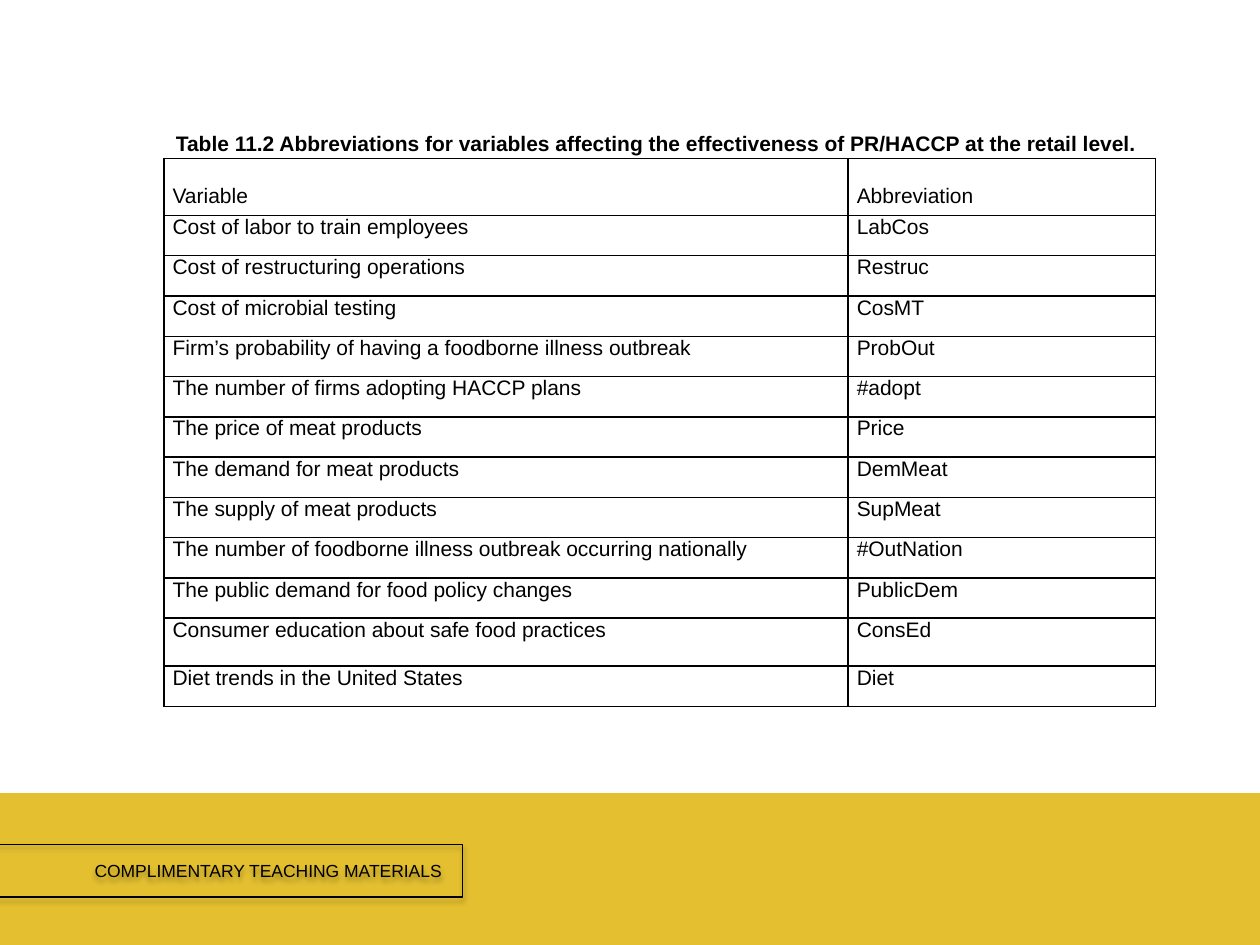
from dataclasses import dataclass

from lxml import etree
from pptx import Presentation
from pptx.dml.color import RGBColor
from pptx.enum.shapes import MSO_SHAPE
from pptx.enum.text import MSO_ANCHOR, PP_ALIGN
from pptx.oxml.ns import qn
from pptx.util import Inches, Pt

RECT = MSO_SHAPE.RECTANGLE
TOP, MIDDLE, BOTTOM = MSO_ANCHOR.TOP, MSO_ANCHOR.MIDDLE, MSO_ANCHOR.BOTTOM
LEFT, CENTER = PP_ALIGN.LEFT, PP_ALIGN.CENTER


@dataclass(frozen=True)
class Theme:
    ink: RGBColor = RGBColor(0x00, 0x00, 0x00)
    gold: RGBColor = RGBColor(0xE4, 0xC0, 0x30)
    font: str = "Arial"
    body: Pt = Pt(12)
    label: Pt = Pt(10)
    border: Pt = Pt(1)


THEME = Theme()

ROWS = [
    ("Variable", "Abbreviation"),
    ("Cost of labor to train employees", "LabCos"),
    ("Cost of restructuring operations", "Restruc"),
    ("Cost of microbial testing", "CosMT"),
    ("Firm’s probability of having a foodborne illness outbreak", "ProbOut"),
    ("The number of firms adopting HACCP plans", "#adopt"),
    ("The price of meat products", "Price"),
    ("The demand for meat products", "DemMeat"),
    ("The supply of meat products", "SupMeat"),
    ("The number of foodborne illness outbreak occurring nationally", "#OutNation"),
    ("The public demand for food policy changes", "PublicDem"),
    ("Consumer education about safe food practices", "ConsEd"),
    ("Diet trends in the United States", "Diet"),
]
HEADER_HEIGHT, ROW_HEIGHT = 0.45, 0.32
TALL_ROWS = {11: 0.38}


def add_text(tf, text, size, bold=False, align=LEFT):
    p = tf.paragraphs[0]
    p.alignment = align
    r = p.add_run()
    r.text = text
    r.font.name = THEME.font
    r.font.size = size
    r.font.bold = bold
    r.font.color.rgb = THEME.ink


def set_margins(target, left, top, right, bottom):
    target.margin_left, target.margin_top = Inches(left), Inches(top)
    target.margin_right, target.margin_bottom = Inches(right), Inches(bottom)


def add_shadow(sp):
    effects = sp._element.spPr.find(qn("a:effectLst"))
    shadow = etree.SubElement(effects, qn("a:outerShdw"), blurRad=str(Pt(3.1)),
                              dist=str(Pt(1.8)), dir="5400000", rotWithShape="0")
    color = etree.SubElement(shadow, qn("a:srgbClr"), val=str(THEME.ink))
    etree.SubElement(color, qn("a:alpha"), val="35000")


def add_footer(slide, x, y, w, h):
    band = slide.shapes.add_shape(RECT, Inches(x), Inches(y), Inches(w), Inches(h))
    band.shadow.inherit = False
    band.fill.solid()
    band.fill.fore_color.rgb = THEME.gold
    band.line.color.rgb = THEME.gold
    band.line.width = Pt(2)

    label = slide.shapes.add_shape(RECT, Inches(x - 0.04), Inches(y + 0.39),
                                   Inches(3.71), Inches(0.42))
    label.shadow.inherit = False
    label.fill.background()
    label.line.color.rgb = THEME.ink
    label.line.width = Pt(0.75)
    add_shadow(label)
    tf = label.text_frame
    tf.vertical_anchor = MIDDLE
    set_margins(tf, 0.79, 0.05, 0.1, 0.05)
    add_text(tf, "COMPLIMENTARY TEACHING MATERIALS", THEME.label)


def add_borders(cell):
    tcPr = cell._tc.get_or_add_tcPr()
    for i, side in enumerate(("lnL", "lnR", "lnT", "lnB")):
        ln = etree.Element(qn(f"a:{side}"), w=str(THEME.border))
        fill = etree.SubElement(ln, qn("a:solidFill"))
        etree.SubElement(fill, qn("a:srgbClr"), val=str(THEME.ink))
        tcPr.insert(i, ln)


def add_variable_table(slide, x, y, w):
    heights = [TALL_ROWS.get(i, ROW_HEIGHT) for i in range(len(ROWS))]
    heights[0] = HEADER_HEIGHT
    table = slide.shapes.add_table(len(ROWS), 2, Inches(x), Inches(y), Inches(w),
                                   Inches(sum(heights))).table
    table.first_row = table.horz_banding = False
    for col, width in zip(table.columns, (5.43, w - 5.43)):
        col.width = Inches(width)
    for i, (height, texts) in enumerate(zip(heights, ROWS)):
        table.rows[i].height = Inches(height)
        for j, text in enumerate(texts):
            cell = table.cell(i, j)
            cell.fill.background()
            cell.vertical_anchor = TOP if i else BOTTOM
            set_margins(cell, 0.07, 0, 0.07, 0 if i else 0.06)
            add_borders(cell)
            add_text(cell.text_frame, text, THEME.body)


def add_title(slide, x, y, w, h):
    title = slide.shapes.title
    title.left, title.top = Inches(x), Inches(y)
    title.width, title.height = Inches(w), Inches(h)
    tf = title.text_frame
    tf.word_wrap = True
    tf.vertical_anchor = BOTTOM
    set_margins(tf, 0.05, 0.05, 0.1, 0.05)
    add_text(tf, "Table 11.2 Abbreviations for variables affecting the effectiveness "
                 "of PR/HACCP at the retail level.", THEME.body, True, CENTER)


def main():
    prs = Presentation()
    prs.slide_width, prs.slide_height = Inches(10), Inches(7.5)
    slide = prs.slides.add_slide(prs.slide_layouts[5])
    add_footer(slide, 0, 6.31, 10, 1.19)
    add_variable_table(slide, 1.3, 1.26, 7.87)
    add_title(slide, 1.3, 0.3, 7.87, 0.99)
    prs.save("out.pptx")


if __name__ == "__main__":
    main()
